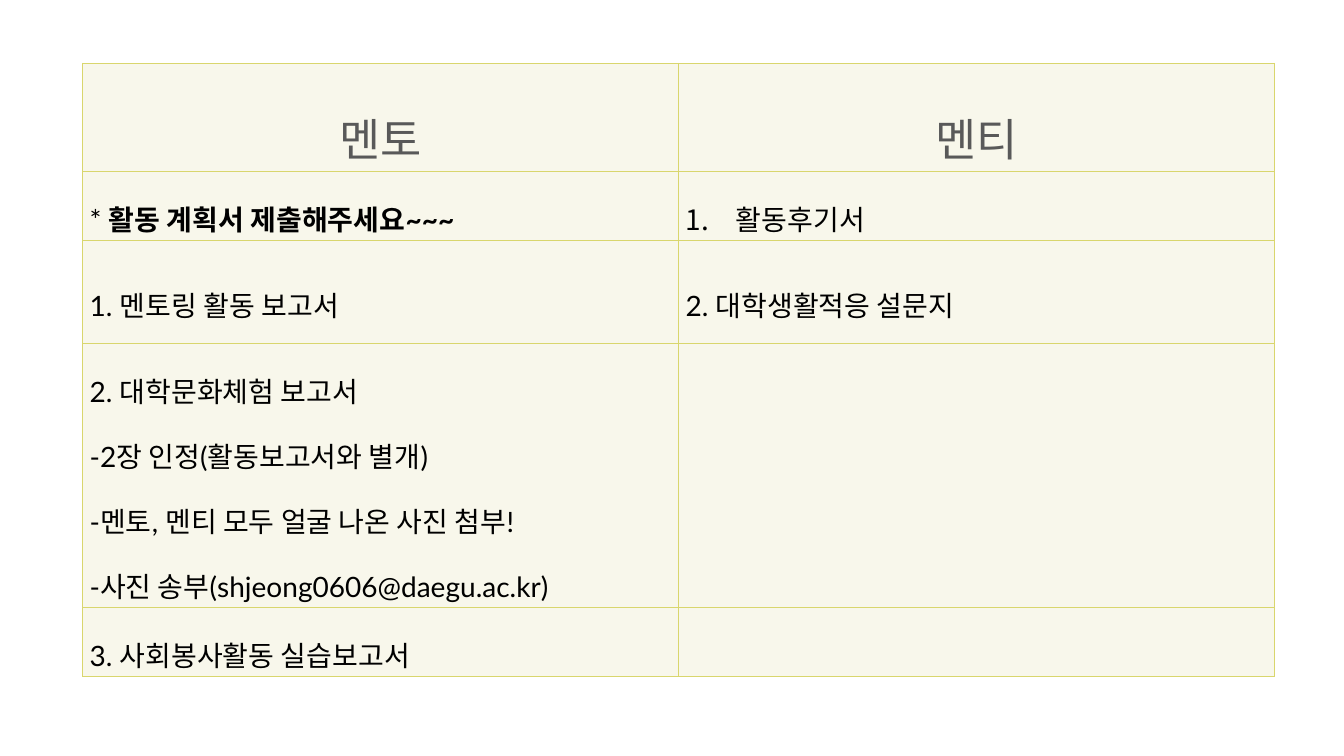
from lxml.etree import SubElement
from pptx import Presentation
from pptx.dml.color import RGBColor
from pptx.enum.text import MSO_ANCHOR, PP_ALIGN
from pptx.oxml import parse_xml
from pptx.oxml.ns import nsdecls, qn
from pptx.util import Inches, Pt

HUES = {"fill": "F8F7EB", "edge": "D9D66D", "head": "595959", "body": "000000"}
INSETS = {"margin_left": 0.07, "margin_right": 0.07,
          "margin_top": 0.02, "margin_bottom": 0.02}
HEAD = {"size": Pt(32), "name": "Noto Sans CJK KR"}
BODY = {"size": Pt(20), "name": "Lato"}
ASIAN = "Noto Sans CJK KR"

# Each cell is a list of paragraphs; each paragraph is a list of (text, bold) runs.
ROWS = [
    (1, [[("멘토", None)]], [[("멘티", None)]]),
    (1, [[("* ", None), ("활동 계획서 제출해주세요~~~", True)]],
        [[("활동후기서", None)]]),
    (1.79, [[("1. 멘토링 활동 보고서", None)]],
           [[("2. 대학생활적응 설문지", None)]]),
    (2.18, [[("2. 대학문화체험 보고서", None)],
            [("-2장 인정(활동보고서와 별개)", None)],
            [("-멘토, 멘티 모두 얼굴 나온 사진 첨부!", None)],
            [("-사진 송부(shjeong0606@daegu.ac.kr)", None)]], []),
    (1, [[("3. 사회봉사활동 실습보고서", None)]], []),
]
NUMBERED = (1, 1)


class Page:
    """A blank slide with a grid of columns and rows, in inches."""

    def __init__(self, deck, left, top, col, row):
        self.slide = deck.slides.add_slide(deck.slide_layouts[6])
        self.left, self.top, self.col, self.row = left, top, col, row

    def table(self, rows):
        count = len(rows[0]) - 1
        total = sum(row[0] for row in rows)
        grid = self.slide.shapes.add_table(
            len(rows), count, Inches(self.left), Inches(self.top),
            Inches(count * self.col), Inches(total * self.row)).table
        grid.first_row = grid.horz_banding = False
        for r, (units, *cells) in enumerate(rows):
            grid.rows[r].height = Inches(units * self.row)
            for c, paras in enumerate(cells):
                self.cell(grid.cell(r, c), paras, r == 0, (r, c) == NUMBERED)

    def cell(self, cell, paras, head, numbered):
        cell.vertical_anchor = MSO_ANCHOR.MIDDLE
        for key, value in INSETS.items():
            setattr(cell, key, Inches(value))
        cell.fill.solid()
        cell.fill.fore_color.rgb = RGBColor.from_string(HUES["fill"])
        self.edges(cell)
        frame = cell.text_frame
        for i, runs in enumerate(paras):
            para = frame.add_paragraph() if i else frame.paragraphs[0]
            para.line_spacing = 1.6
            if head:
                para.alignment = PP_ALIGN.CENTER
            if numbered:
                self.number(para)
            for text, bold in runs:
                self.run(para, text, bold, head)

    def edges(self, cell):
        props = cell._tc.get_or_add_tcPr()
        for i, side in enumerate("LRTB"):
            props.insert(i, parse_xml(
                f'<a:ln{side} {nsdecls("a")} w="{Pt(1)}"><a:solidFill>'
                f'<a:srgbClr val="{HUES["edge"]}"/></a:solidFill></a:ln{side}>'))

    def number(self, para):
        props = para._p.get_or_add_pPr()
        props.set("marL", str(Inches(0.5)))
        props.set("indent", str(Inches(-0.5)))
        SubElement(props, qn("a:buAutoNum"), type="arabicPeriod")

    def run(self, para, text, bold, head):
        run = para.add_run()
        run.text = text
        font = run.font
        font.color.rgb = RGBColor.from_string(HUES["head" if head else "body"])
        for key, value in {**(HEAD if head else BODY), "bold": bold}.items():
            setattr(font, key, value)
        SubElement(run._r.get_or_add_rPr(), qn("a:ea"), typeface=ASIAN)


def main():
    deck = Presentation()
    deck.slide_width, deck.slide_height = Inches(13.33), Inches(7.5)
    page = Page(deck, left=0.82, top=0.63, col=5.91, row=0.57)
    page.table(ROWS)
    deck.save("out.pptx")


if __name__ == "__main__":
    main()
